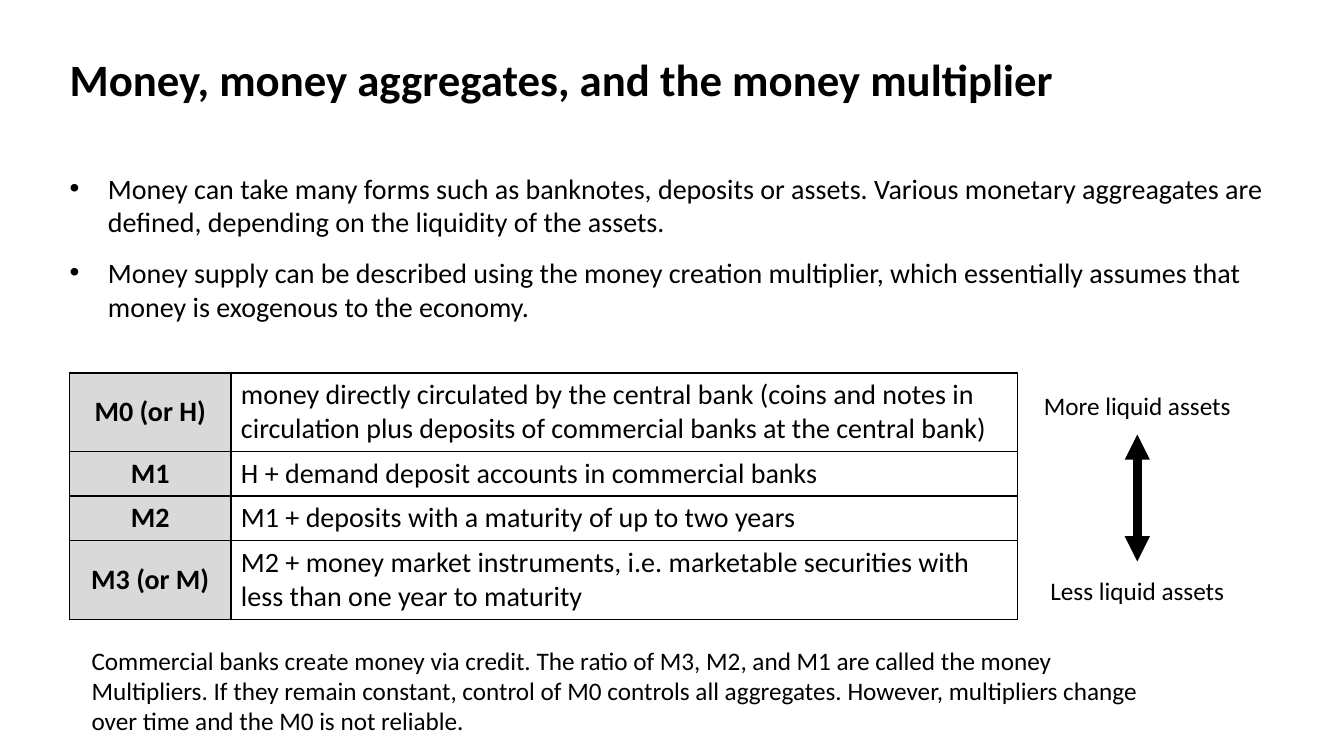
from lxml.etree import SubElement
from pptx import Presentation
from pptx.dml.color import RGBColor
from pptx.enum.shapes import MSO_CONNECTOR
from pptx.enum.text import MSO_ANCHOR, MSO_AUTO_SIZE, PP_ALIGN
from pptx.oxml.ns import qn
from pptx.util import Pt

PX = 9144  # EMU per px, 100 px to the inch
FONT = "Calibri"
COLORS = {"ink": "000000", "label": "D9D9D9"}

TITLE = "Money, money aggregates, and the money multiplier"
POINTS = [
    "Money can take many forms such as banknotes, deposits or assets. Various monetary "
    "aggreagates are defined, depending on the liquidity of the assets.",
    "Money supply can be described using the money creation multiplier, which essentially "
    "assumes that money is exogenous to the economy.",
]
# name, definition, row height in px
AGGREGATES = [
    ("M0 (or H)", "money directly circulated by the central bank (coins and notes in "
     "circulation plus deposits of commercial banks at the central bank)", 77),
    ("M1", "H + demand deposit accounts in commercial banks", 43),
    ("M2", "M1 + deposits with a maturity of up to two years", 43),
    ("M3 (or M)", "M2 + money market instruments, i.e. marketable securities with "
     "less than one year to maturity", 77),
]
NOTE = (
    "Commercial banks create money via credit. The ratio of M3, M2, and M1 are called the "
    "money Multipliers. If they remain constant, control of M0 controls all aggregates. "
    "However, multipliers change over time and the M0 is not reliable."
)


def color(name):
    return RGBColor.from_string(COLORS[name])


def place(sp, x, y, w, h):
    sp.left, sp.top, sp.width, sp.height = (v * PX for v in (x, y, w, h))


def add_run(p, text, size, bold=False):
    r = p.add_run()
    r.text = text
    r.font.name = FONT
    r.font.size = Pt(size)
    r.font.bold = bold
    r.font.color.rgb = color("ink")


def fill_title(s, x, y, w, h):
    sp = s.shapes.title
    place(sp, x, y, w, h)
    tf = sp.text_frame
    tf.auto_size = MSO_AUTO_SIZE.NONE
    tf.vertical_anchor = MSO_ANCHOR.MIDDLE
    p = tf.paragraphs[0]
    p.alignment = PP_ALIGN.LEFT
    add_run(p, TITLE, 32, bold=True)


def fill_points(s, x, y, w, h):
    sp = s.placeholders[1]
    place(sp, x, y, w, h)
    tf = sp.text_frame
    tf.auto_size = MSO_AUTO_SIZE.NONE
    for i, text in enumerate(POINTS):
        p = tf.add_paragraph() if i else tf.paragraphs[0]
        pPr = p._p.get_or_add_pPr()
        pPr.set("marL", str(38 * PX))
        pPr.set("indent", str(-38 * PX))
        SubElement(pPr, qn("a:buFont"), typeface="Arial")
        SubElement(pPr, qn("a:buChar"), char="•")
        p.space_before = Pt(6 if i else 0)
        p.space_after = Pt(6)
        add_run(p, text, 20)


def set_borders(cell):
    """Draw a 1 pt line on all four sides, ahead of the fill element."""
    tcPr = cell._tc.get_or_add_tcPr()
    for i, side in enumerate(("lnL", "lnR", "lnT", "lnB")):
        ln = SubElement(tcPr, qn(f"a:{side}"), w=str(Pt(1)))
        SubElement(SubElement(ln, qn("a:solidFill")), qn("a:srgbClr"), val=COLORS["ink"])
        tcPr.insert(i, ln)


def add_aggregates(s, x, y, w, h):
    frame = s.shapes.add_table(len(AGGREGATES), 2, x * PX, y * PX, w * PX, h * PX)
    table = frame.table
    table.first_row = table.horz_banding = False
    label_w = 160
    table.columns[0].width = label_w * PX
    table.columns[1].width = (w - label_w) * PX
    for row, (name, definition, height) in zip(table.rows, AGGREGATES):
        row.height = height * PX
        label, body = row.cells
        label.vertical_anchor = MSO_ANCHOR.MIDDLE
        label.fill.solid()
        label.fill.fore_color.rgb = color("label")
        body.fill.background()
        p = label.text_frame.paragraphs[0]
        p.alignment = PP_ALIGN.CENTER
        add_run(p, name, 20, bold=True)
        add_run(body.text_frame.paragraphs[0], definition, 20)
        set_borders(label)
        set_borders(body)


def add_text(s, text, x, y, w, h, align=PP_ALIGN.LEFT):
    tf = s.shapes.add_textbox(x * PX, y * PX, w * PX, h * PX).text_frame
    tf.word_wrap = True
    p = tf.paragraphs[0]
    p.alignment = align
    add_run(p, text, 18)


def add_liquidity_scale(s, x, y, w, h):
    """Put a label at each end of the box and a two-headed arrow between them."""
    label_h, gap = 40, 9
    add_text(s, "More liquid assets", x, y, w, label_h, PP_ALIGN.CENTER)
    add_text(s, "Less liquid assets", x, y + h - label_h, w, label_h, PP_ALIGN.CENTER)
    mid = (x + w // 2) * PX
    arrow = s.shapes.add_connector(
        MSO_CONNECTOR.STRAIGHT,
        mid, (y + label_h + gap) * PX, mid, (y + h - label_h - gap) * PX)
    arrow.line.color.rgb = color("ink")
    arrow.line.width = Pt(6)
    ln = arrow.line._get_or_add_ln()
    for end in ("headEnd", "tailEnd"):
        SubElement(ln, qn(f"a:{end}"), type="triangle")
    SubElement(arrow._element.spPr, qn("a:effectLst"))


def main():
    prs = Presentation()
    prs.slide_width, prs.slide_height = 1333 * PX, 750 * PX
    s = prs.slides.add_slide(prs.slide_layouts[1])
    fill_title(s, 59, 43, 1210, 69)
    fill_points(s, 59, 165, 1210, 161)
    add_aggregates(s, 69, 370, 940, 240)
    add_liquidity_scale(s, 1018, 382, 220, 224)
    add_text(s, NOTE, 81, 635, 1064, 101)
    prs.save("out.pptx")


if __name__ == "__main__":
    main()
